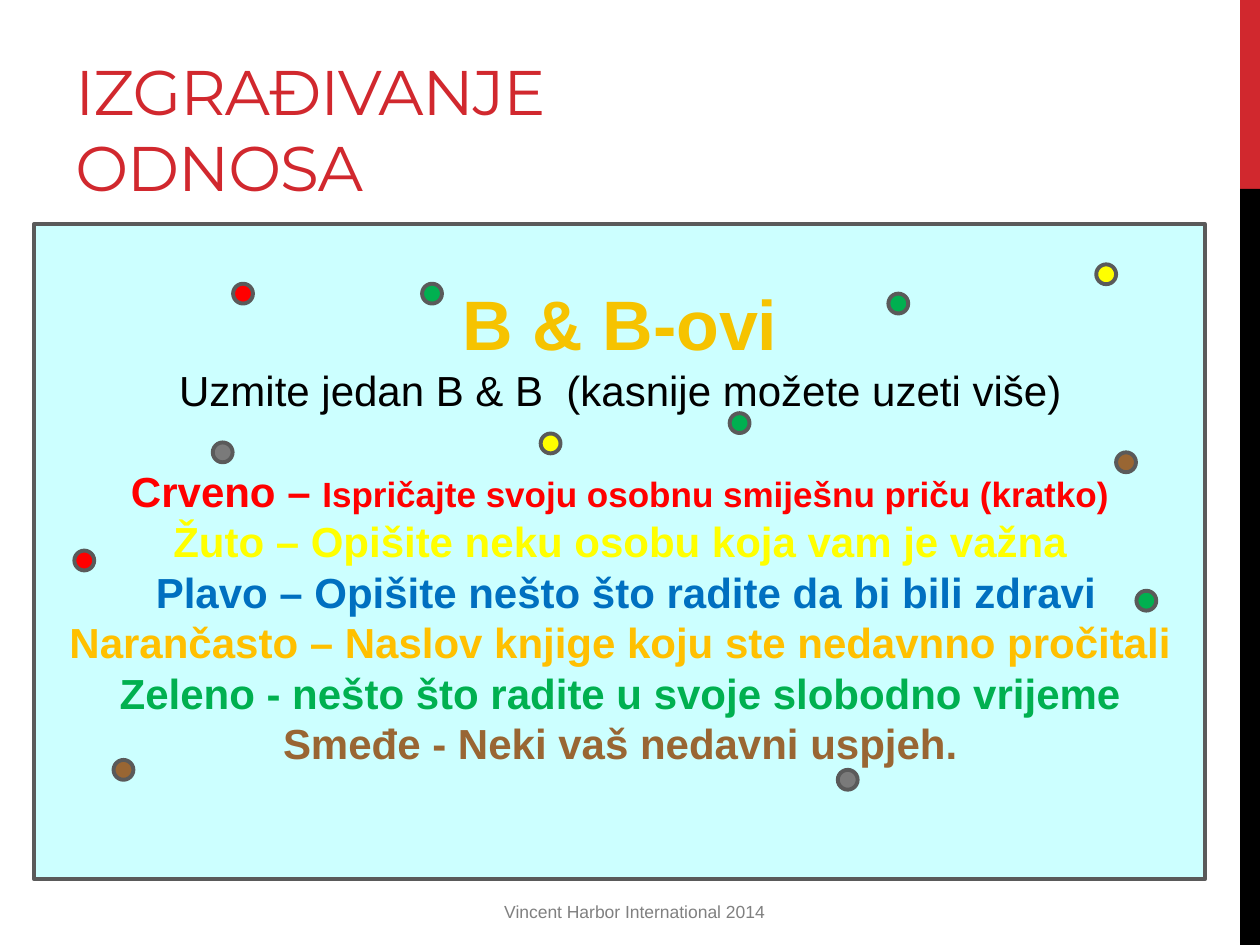
from pptx import Presentation
from pptx.dml.color import RGBColor
from pptx.enum.shapes import MSO_SHAPE
from pptx.enum.text import MSO_ANCHOR, PP_ALIGN
from pptx.util import Cm, Pt

CRIMSON = RGBColor(0xD1, 0x28, 0x2E)
BLACK = RGBColor(0x00, 0x00, 0x00)
PALE_CYAN = RGBColor(0xCC, 0xFF, 0xFF)
OUTLINE = RGBColor(0x5A, 0x5A, 0x5A)
GOLD = RGBColor(0xF6, 0xC3, 0x00)
RED = RGBColor(0xFF, 0x00, 0x00)
YELLOW = RGBColor(0xFF, 0xFF, 0x00)
BLUE = RGBColor(0x00, 0x70, 0xC0)
ORANGE = RGBColor(0xFF, 0xC0, 0x00)
GREEN = RGBColor(0x00, 0xB0, 0x50)
BROWN = RGBColor(0x99, 0x66, 0x33)
GREY = RGBColor(0x7A, 0x7A, 0x7A)
FOOTER_GREY = RGBColor(0x80, 0x80, 0x80)

presentation = Presentation()
presentation.slide_width = Cm(25.4)
presentation.slide_height = Cm(19.05)
slide = presentation.slides.add_slide(presentation.slide_layouts[6])


def add_filled_shape(kind, left, top, width, height, fill, outlined=True):
    shape = slide.shapes.add_shape(kind, Cm(left), Cm(top), Cm(width), Cm(height))
    shape.shadow.inherit = False
    shape.fill.solid()
    shape.fill.fore_color.rgb = fill
    if outlined:
        shape.line.color.rgb = OUTLINE
        shape.line.width = Pt(2.25)
    else:
        shape.line.fill.background()


def format_run(run, size, color, bold=False, font="Arial"):
    run.font.name = font
    run.font.size = Pt(size)
    run.font.bold = bold
    run.font.color.rgb = color


# Side bar
add_filled_shape(MSO_SHAPE.RECTANGLE, 25, 0, 0.4, 3.81, CRIMSON, outlined=False)
add_filled_shape(MSO_SHAPE.RECTANGLE, 25, 3.81, 0.4, 15.24, BLACK, outlined=False)

# Title
title = slide.shapes.add_textbox(Cm(1.27), Cm(0.43), Cm(16.08), Cm(3.81))
title_frame = title.text_frame
title_frame.word_wrap = True
title_frame.vertical_anchor = MSO_ANCHOR.BOTTOM
title_frame.margin_right = Cm(1.5)
title_frame.text = "IZGRAĐIVANJE ODNOSA"
title_run = title_frame.paragraphs[0].runs[0]
format_run(title_run, 36, CRIMSON, font="Montserrat")
title_run.font._element.set("spc", "-60")

# Panel
add_filled_shape(MSO_SHAPE.RECTANGLE, 0.69, 4.52, 23.6, 13.21, PALE_CYAN)

# Instructions: each line is a list of (text, size, color, bold)
lines = [
    [("B & B-ovi", 40, GOLD, True)],
    [("Uzmite jedan B & B  (kasnije možete uzeti više)", 24, BLACK, False)],
    [("Crveno – ", 24, RED, True),
     ("Ispričajte svoju osobnu smiješnu priču (kratko)", 20, RED, True)],
    [("Žuto – Opišite neku osobu koja vam je važna", 24, YELLOW, True)],
    [(" Plavo – Opišite nešto što radite da bi bili zdravi", 24, BLUE, True)],
    [("Narančasto – Naslov knjige koju ste nedavnno pročitali", 24, ORANGE, True)],
    [("Zeleno - nešto što radite u svoje slobodno vrijeme", 24, GREEN, True)],
    [("Smeđe - Neki vaš nedavni uspjeh.", 24, BROWN, True)],
]
instructions = slide.shapes.add_textbox(Cm(0.91), Cm(5.54), Cm(23.19), Cm(10.95))
instructions_frame = instructions.text_frame
instructions_frame.word_wrap = True
for index, line in enumerate(lines):
    paragraph = instructions_frame.paragraphs[0] if index == 0 else instructions_frame.add_paragraph()
    paragraph.alignment = PP_ALIGN.CENTER
    paragraph.line_spacing = 1.0
    for text, size, color, bold in line:
        run = paragraph.add_run()
        run.text = text
        format_run(run, size, color, bold)
# Gap of one line before the colour list
instructions_frame.paragraphs[2].space_before = Pt(28.7)

# Scattered sweets
sweets = [
    (4.7, 5.72, RED), (8.51, 5.72, GREEN), (17.91, 5.92, GREEN),
    (4.29, 8.92, GREY), (22.5, 9.12, BROWN), (2.29, 15.32, BROWN),
    (16.89, 15.52, GREY), (1.5, 11.1, RED), (22.91, 11.91, GREEN),
    (22.1, 5.33, YELLOW), (14.71, 8.33, GREEN), (10.9, 8.74, YELLOW),
]
for left, top, color in sweets:
    add_filled_shape(MSO_SHAPE.OVAL, left, top, 0.4, 0.4, color)

# Footer
footer = slide.shapes.add_textbox(Cm(1.27), Cm(18.03), Cm(23.04), Cm(0.79))
footer.text_frame.word_wrap = True
footer.text_frame.text = "Vincent Harbor International 2014"
footer_paragraph = footer.text_frame.paragraphs[0]
footer_paragraph.alignment = PP_ALIGN.CENTER
format_run(footer_paragraph.runs[0], 10, FOOTER_GREY)

presentation.save("out.pptx")
